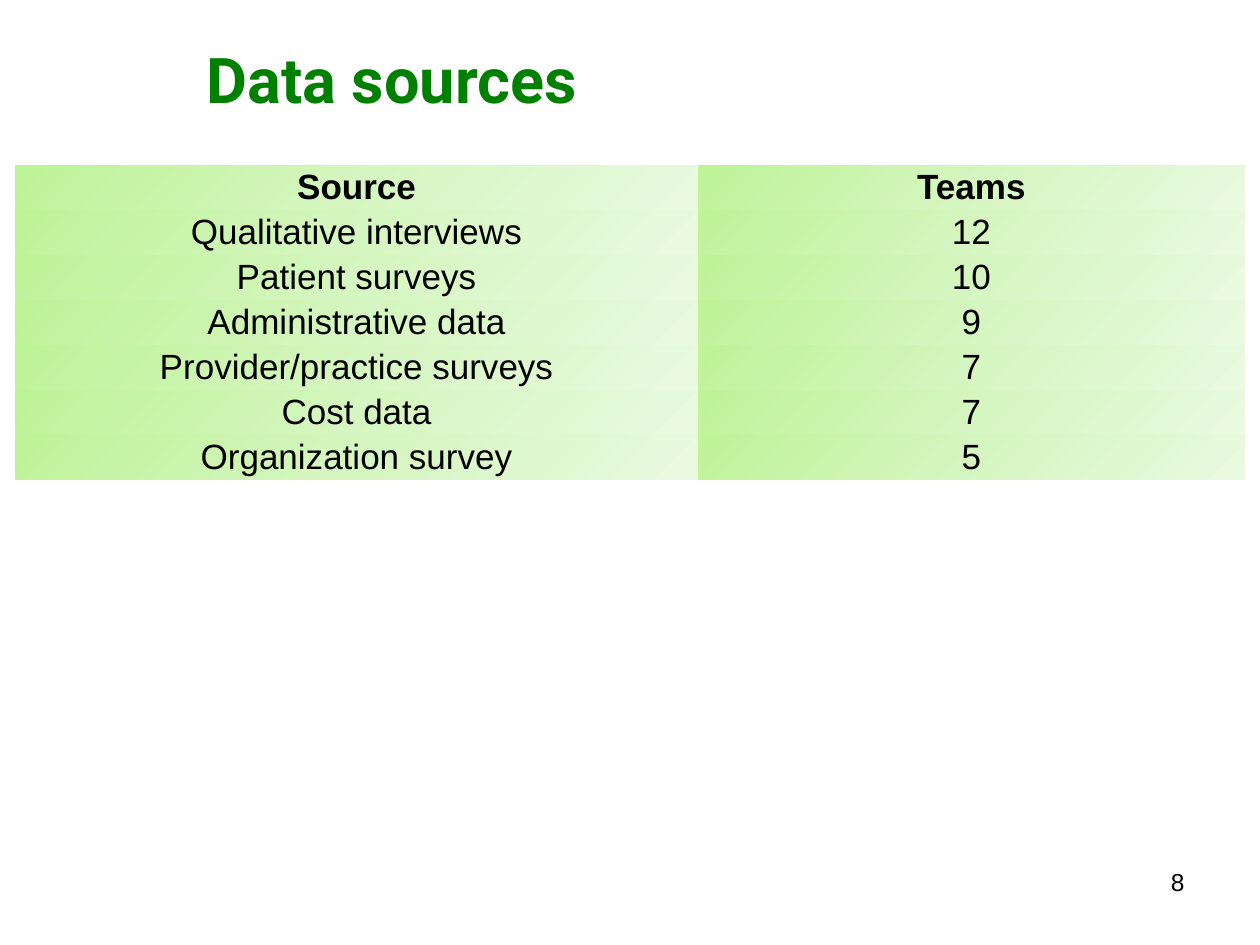
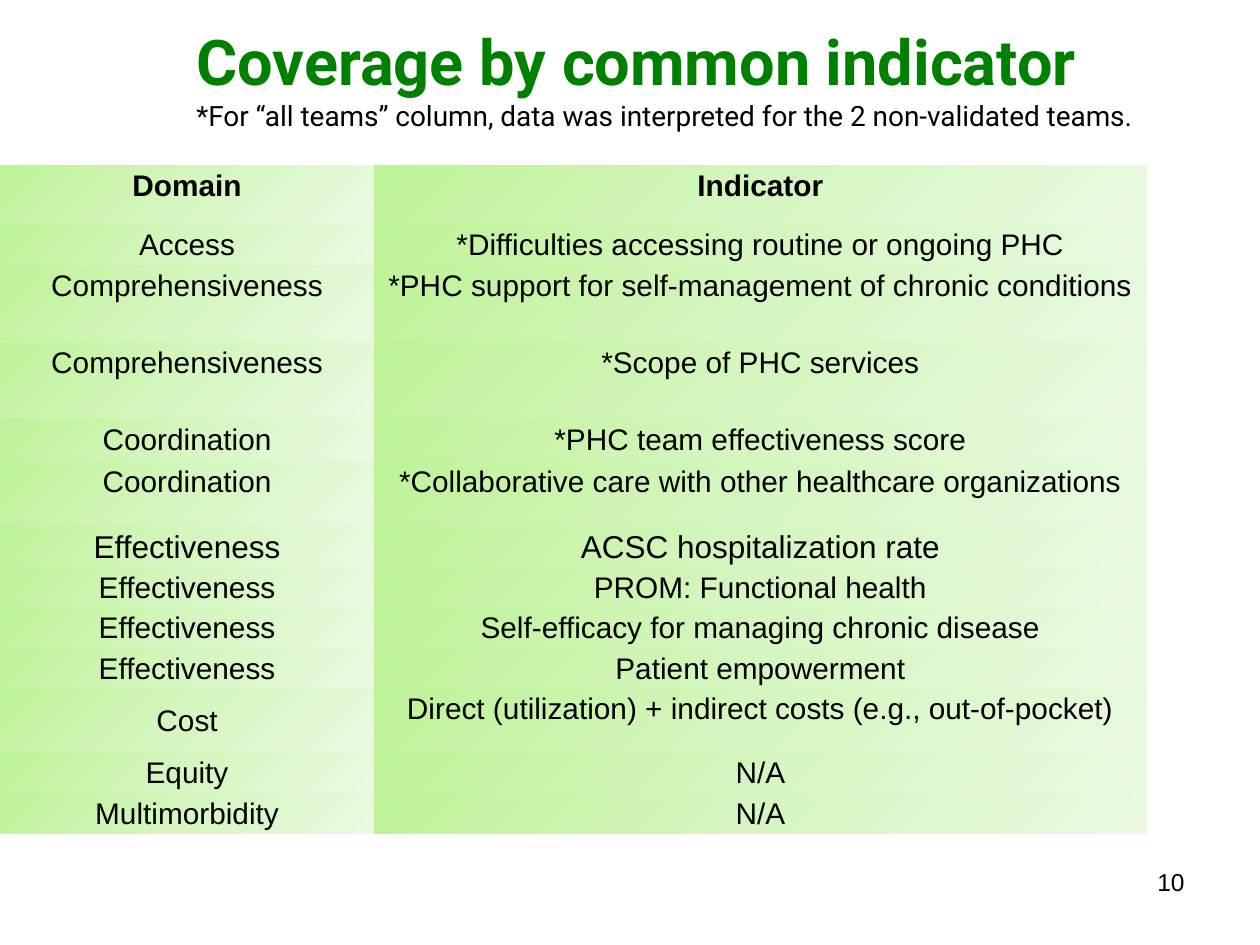
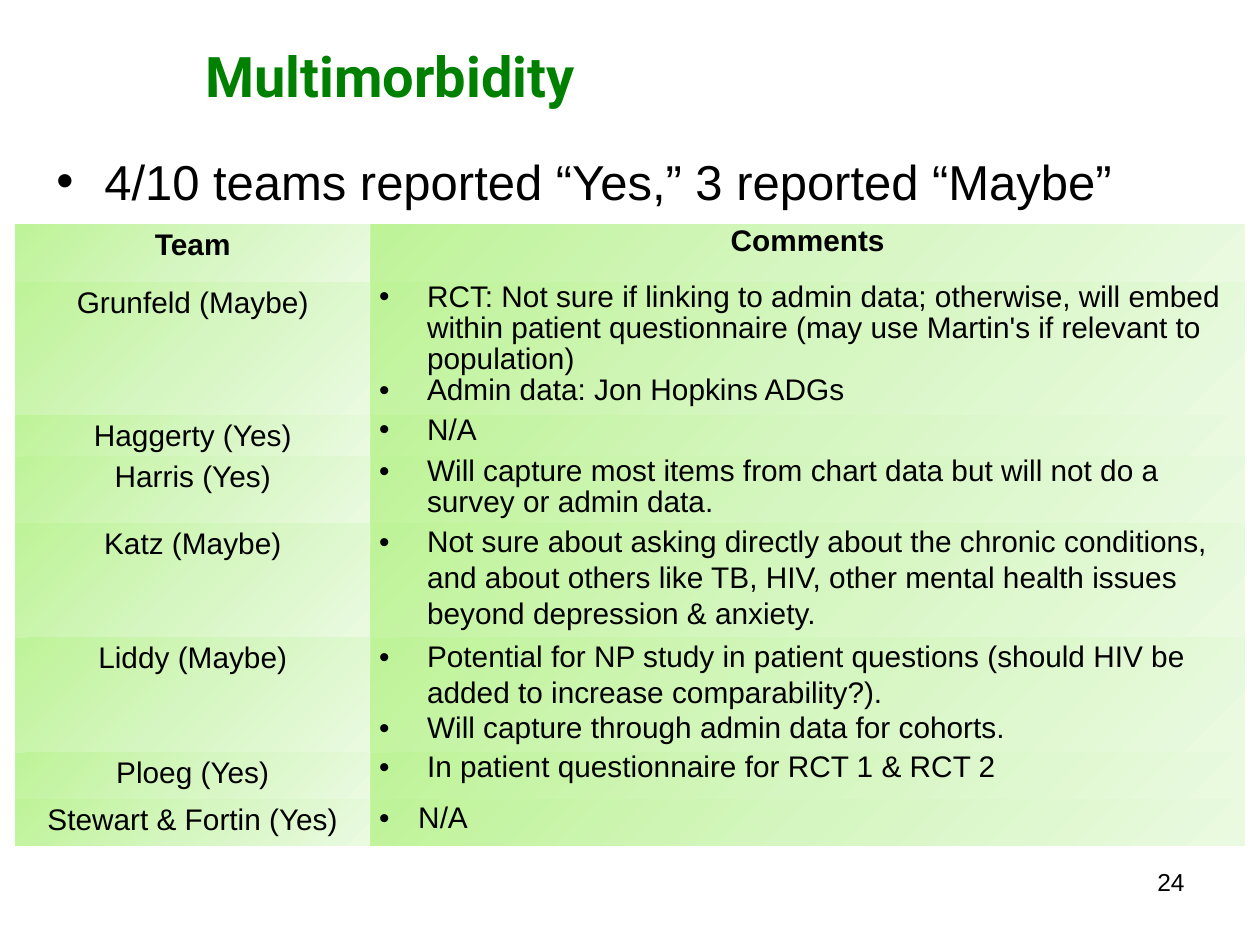
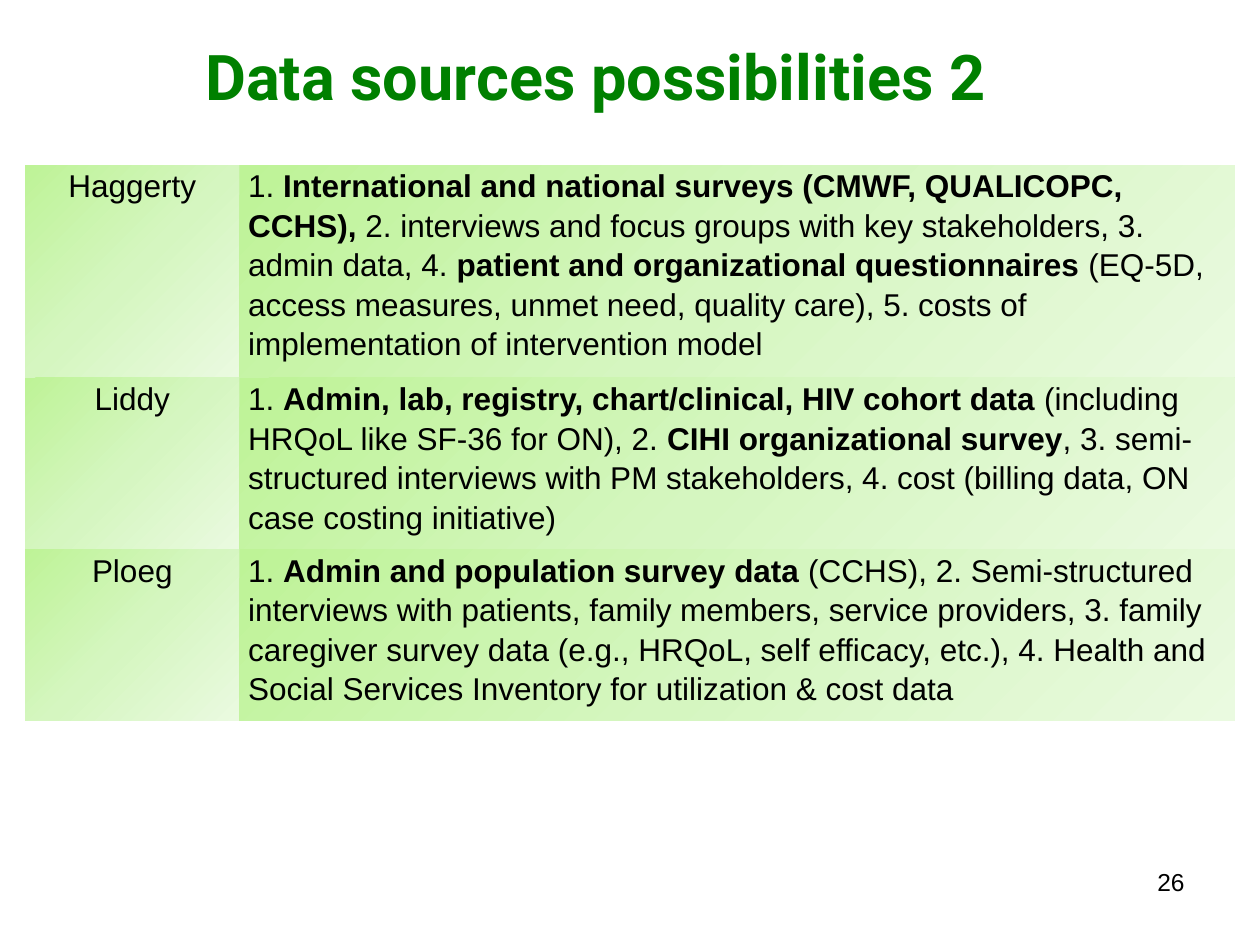
from dataclasses import dataclass

from lxml.etree import SubElement
from pptx import Presentation
from pptx.dml.color import RGBColor
from pptx.enum.text import MSO_ANCHOR, PP_ALIGN
from pptx.oxml import parse_xml
from pptx.oxml.ns import nsdecls, qn
from pptx.util import Inches, Pt


@dataclass(frozen=True)
class Theme:
    green: str = "008000"
    ink: str = "000000"
    shades: tuple = ((0, "BEF397"), (50, "D5F6C0"), (100, "EAFAE0"))
    head: str = "Roboto"
    body: str = "Arial"
    title: int = 36
    short: int = 32
    lead: int = 28
    large: int = 20
    medium: int = 18
    small: int = 17
    note: int = 16
    foot: int = 14
    loose: float = 1.12
    snug: float = 1.07
    dense: float = 0.93
    plain: str = "{2D5ABB26-0587-4C30-8999-92F81FD0307C}"


look = Theme()
stops = "".join(
    f'<a:gs pos="{at * 1000}"><a:srgbClr val="{shade}"/></a:gs>'
    for at, shade in look.shades
)
shading = (
    f'<a:gradFill {nsdecls("a")} rotWithShape="1"><a:gsLst>{stops}</a:gsLst>'
    '<a:lin ang="2700000" scaled="0"/></a:gradFill>'
)


def write(para, text, size, font=look.body, color=look.ink, bold=False,
          align=PP_ALIGN.LEFT, spacing=1.0, indent=0):
    """Add runs to a paragraph; ** switches bold, an indent brings a bullet."""
    para.alignment = align
    para.line_spacing = spacing
    if indent:
        props = para._p.get_or_add_pPr()
        props.set("marL", str(Inches(indent)))
        props.set("indent", str(-Inches(indent)))
        SubElement(props, qn("a:buFont")).set("typeface", font)
        SubElement(props, qn("a:buChar")).set("char", "•")
    for i, part in enumerate(text.split("**")):
        if part:
            run = para.add_run()
            run.text = part
            run.font.name = font
            run.font.size = Pt(size)
            run.font.bold = bold or i % 2 == 1
            run.font.color.rgb = RGBColor.from_string(color)


def fill(cell, text, anchor=MSO_ANCHOR.TOP, side=0.07, top=0, **form):
    """Shade a cell and write one paragraph for each line of text."""
    cell.margin_left = cell.margin_right = Inches(side)
    cell.margin_top = Inches(top)
    cell.margin_bottom = 0
    cell.vertical_anchor = anchor
    cell._tc.get_or_add_tcPr().append(parse_xml(shading))
    frame = cell.text_frame
    for i, line in enumerate(text.split("\n")):
        para = frame.add_paragraph() if i else frame.paragraphs[0]
        write(para, line, **form)


deck = Presentation()
deck.slide_width, deck.slide_height = Inches(10), Inches(7.5)

# Title, title size, title left and top, note, page number,
# table left and top, column widths, row heights
pages = [
    ("Data sources", look.title, 1.54, 0.24, "", 8,
     0.12, 1.31, [5.42, 4.34], [0.32] + [0.19] * 6),
    ("Coverage by common indicator", look.title, 1.46, 0.23,
     "*For “all teams” column, data was interpreted for the 2 non-validated teams.", 10,
     0, 1.31, [2.97, 6.13],
     [0.47, 0.33, 0.61, 0.61, 0.33, 0.51] + [0.32] * 4 + [0.51, 0.32, 0.32]),
    ("Multimorbidity", look.short, 1.53, 0.21, "", 24,
     0.12, 1.78, [2.82, 6.94],
     [0.46, 0.33, 0.33, 0.33, 0.52, 0.52, 0.37, 0.37]),
    ("Data sources possibilities 2", look.title, 1.53, 0.21, "", 26,
     0.2, 1.31, [1.7, 7.9], [1.69, 1.36, 1.36]),
]

slides, tables = [], []
for title, size, left, top, note, number, x, y, widths, heights in pages:
    slide = deck.slides.add_slide(deck.slide_layouts[6])
    slides.append(slide)

    frame = slide.shapes.add_textbox(
        Inches(left), Inches(top), Inches(8.27), Inches(0.77)).text_frame
    frame.word_wrap = True
    frame.vertical_anchor = MSO_ANCHOR.MIDDLE
    para = frame.paragraphs[0]
    write(para, title, size, font=look.head, color=look.green, bold=True)
    if note:
        para.add_line_break()
        write(para, note, look.note, font=look.head)

    frame = slide.shapes.add_textbox(
        Inches(7.17), Inches(6.83), Inches(2.33), Inches(0.52)).text_frame
    frame.word_wrap = True
    write(frame.paragraphs[0], str(number), look.foot, align=PP_ALIGN.RIGHT)

    table = slide.shapes.add_table(
        len(heights), len(widths), Inches(x), Inches(y),
        Inches(sum(widths)), Inches(sum(heights))).table
    table.first_row = table.horz_banding = False
    table._tbl.tblPr.find(qn("a:tableStyleId")).text = look.plain
    for column, width in zip(table.columns, widths):
        column.width = Inches(width)
    for row, height in zip(table.rows, heights):
        row.height = Inches(height)
    tables.append(table)

source, cover, morbid, options = tables
middle = dict(align=PP_ALIGN.CENTER, spacing=look.loose)

# Data sources
counts = [
    ("Source", "Teams"),
    ("Qualitative interviews", "12"),
    ("Patient surveys", "10"),
    ("Administrative data", "9"),
    ("Provider/practice surveys", "7"),
    ("Cost data", "7"),
    ("Organization survey", "5"),
]
for r, row in enumerate(counts):
    for c, text in enumerate(row):
        fill(source.cell(r, c), text, size=look.large, bold=r == 0,
             align=PP_ALIGN.CENTER, spacing=look.snug)

# Coverage by common indicator
domains = [
    ("Domain", "Indicator"),
    ("Access", "*Difficulties accessing routine or ongoing PHC"),
    ("Comprehensiveness", "*PHC support for self-management of chronic conditions"),
    ("Comprehensiveness", "*Scope of PHC services"),
    ("Coordination", "*PHC team effectiveness score"),
    ("Coordination", "*Collaborative care with other healthcare organizations"),
    ("Effectiveness", "ACSC hospitalization rate"),
    ("Effectiveness", "PROM: Functional health"),
    ("Effectiveness", "Self-efficacy for managing chronic disease"),
    ("Effectiveness", "Patient empowerment"),
    ("Cost", "Direct (utilization) + indirect costs (e.g., out-of-pocket)"),
    ("Equity", "N/A"),
    ("Multimorbidity", "N/A"),
]
tight = dict(anchor=MSO_ANCHOR.MIDDLE, side=0.01, top=0.01, align=PP_ALIGN.CENTER)
for r, (domain, index) in enumerate(domains):
    form = dict(size=look.medium if r == 6 else look.small, bold=r == 0)
    fill(cover.cell(r, 0), domain, **form, **(tight if r >= 10 else middle))
    fill(cover.cell(r, 1), index, **form, **middle)

# Multimorbidity: team, comments, line spacing, indent
remarks = [
    ("Grunfeld (Maybe)",
     "RCT: Not sure if linking to admin data; otherwise, will embed within patient "
     "questionnaire (may use Martin's if relevant to population)\n"
     "Admin data: Jon Hopkins ADGs", look.dense, 0.38),
    ("Haggerty (Yes)", "N/A", look.dense, 0.38),
    ("Harris (Yes)",
     "Will capture most items from chart data but will not do a survey or admin data.",
     look.dense, 0.38),
    ("Katz (Maybe)",
     "Not sure about asking directly about the chronic conditions, and about others "
     "like TB, HIV, other mental health issues beyond depression & anxiety.",
     look.snug, 0.38),
    ("Liddy (Maybe)",
     "Potential for NP study in patient questions (should HIV be added to increase "
     "comparability?).\nWill capture through admin data for cohorts.",
     look.snug, 0.38),
    ("Ploeg (Yes)", "In patient questionnaire for RCT 1 & RCT 2", look.dense, 0.38),
    ("Stewart & Fortin (Yes)", "N/A", look.snug, 0.31),
]
fill(morbid.cell(0, 0), "Team", size=look.small, bold=True, **middle)
fill(morbid.cell(0, 1), "Comments", size=look.small, bold=True, align=PP_ALIGN.CENTER)
for r, (team, text, spacing, indent) in enumerate(remarks, 1):
    fill(morbid.cell(r, 0), team, size=look.small, **middle)
    fill(morbid.cell(r, 1), text, size=look.small, spacing=spacing, indent=indent)

frame = slides[2].shapes.add_textbox(
    Inches(0.35), Inches(1.15), Inches(9), Inches(4.95)).text_frame
frame.word_wrap = True
write(frame.paragraphs[0], "4/10 teams reported “Yes,” 3 reported “Maybe”",
      look.lead, indent=0.38)

# Data sources possibilities 2
plans = [
    ("Haggerty",
     "1. **International and national surveys (CMWF, QUALICOPC, CCHS), **2. interviews "
     "and focus groups with key stakeholders, 3. admin data, 4. **patient and "
     "organizational questionnaires** (EQ-5D, access measures, unmet need, quality "
     "care), 5. costs of implementation of intervention model"),
    ("Liddy",
     "1. **Admin, lab, registry, chart/clinical, HIV cohort data **(including HRQoL "
     "like SF-36 for ON), 2. **CIHI organizational survey**, 3. semi-structured "
     "interviews with PM stakeholders, 4. cost (billing data, ON case costing "
     "initiative)"),
    ("Ploeg",
     "1. **Admin and population survey data **(CCHS), 2. Semi-structured interviews "
     "with patients, family members, service providers, 3. family caregiver survey "
     "data (e.g., HRQoL, self efficacy, etc.), 4. Health and Social Services "
     "Inventory for utilization & cost data"),
]
for r, (team, plan) in enumerate(plans):
    fill(options.cell(r, 0), team, size=look.medium, **middle)
    fill(options.cell(r, 1), plan, size=look.medium, spacing=look.loose)

deck.save("out.pptx")
